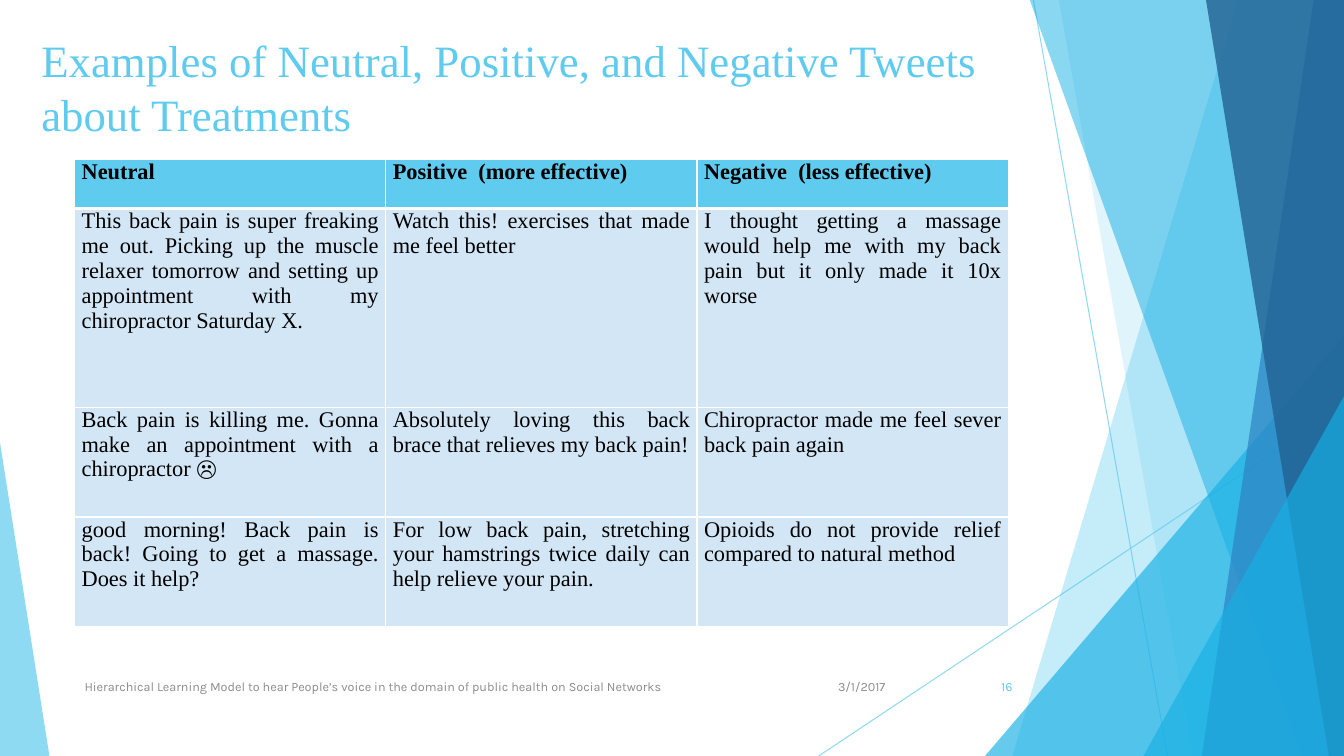
from lxml import etree
from pptx import Presentation
from pptx import util as u
from pptx.dml.color import RGBColor
from pptx.enum import shapes as sh, text as tx
from pptx.oxml.ns import qn

PX = 9144
WIDE, HIGH = 1333, 750
SKY, DEEP, BLUE, NAVY = "5FCBEF", "17B0E4", "2E83C3", "226292"
GREY, PALE, WHITE, BLACK = "8C8C8C", "D3E6F5", "FFFFFF", "000000"
SERIF, SANS = "Times New Roman", "Karla"

RAYS = [((1025, 0), (1158, HIGH)), ((WIDE, 403), (812, HIGH))]
BANDS = [
    (1228, 1004, SKY, 36),
    (1050, 1183, SKY, 20),
    ((977, 333, 356, 417), 1, DEEP, 66),
    (1021, 1291, DEEP, 50),
    (1303, 1192, BLUE, 70),
    (1196, 1318, NAVY, 80),
    ((1134, 393, 199, 357), 1, DEEP, 66),
    ((0, 439, 49, 311), 0, SKY, 70),
]
TWEETS = [
    ["Neutral ", "Positive  (more effective)", "Negative  (less effective)"],
    ["This back pain is super freaking me out. Picking up the muscle relaxer "
     "tomorrow and setting up appointment with my chiropractor Saturday X.",
     "Watch this! exercises that made me feel better ",
     "I thought getting a massage would help me with my back pain but it only "
     "made it 10x worse"],
    ["Back pain is killing me. Gonna make an appointment with a chiropractor ☹",
     "Absolutely loving this back brace that relieves my back pain!",
     "Chiropractor made me feel sever back pain again"],
    ["good morning! Back pain is back! Going to get a massage. Does it help?",
     "For low back pain, stretching your hamstrings twice daily can help "
     "relieve your pain.",
     "Opioids do not provide relief compared to natural method"],
]
ROWS = [49, 197, 109, 109]


def emu(*nums):
    return [u.Emu(n * PX) for n in nums]


def paint(fill, tone, alpha=100):
    fill.solid()
    fill.fore_color.rgb = RGBColor.from_string(tone)
    if alpha < 100:
        node = fill._xPr.find(qn("a:solidFill"))[0]
        etree.SubElement(node, qn("a:alpha"), val=str(alpha * 1000))


def style(frame, size, font, tone, align, bold=False):
    for para in frame.paragraphs:
        para.alignment = align
        for run in para.runs:
            run.font.size = u.Pt(size)
            run.font.name = font
            run.font.bold = bold
            run.font.color.rgb = RGBColor.from_string(tone)


def add_ray(slide, start, end):
    ray = slide.shapes.add_connector(
        sh.MSO_CONNECTOR.STRAIGHT, *emu(*start, *end))
    ray.line.width = u.Pt(0.75)
    paint(ray.line.fill, SKY, 70)
    etree.SubElement(ray._element.spPr, qn("a:effectLst"))


def add_wedge(slide, box, apex):
    wedge = slide.shapes.add_shape(
        sh.MSO_SHAPE.ISOSCELES_TRIANGLE, *emu(*box))
    wedge.adjustments[0] = apex
    return wedge


def add_band(slide, top, foot):
    pen = slide.shapes.build_freeform(top, -1, scale=PX)
    pen.add_line_segments([(WIDE, -1), (WIDE, HIGH), (foot, HIGH)])
    return pen.convert_to_shape()


def add_decor(slide):
    for start, end in RAYS:
        add_ray(slide, start, end)
    for top, foot, tone, alpha in BANDS:
        draw = add_wedge if isinstance(top, tuple) else add_band
        part = draw(slide, top, foot)
        part.shadow.inherit = False
        part.line.fill.background()
        paint(part.fill, tone, alpha)


def add_title(slide, box, words):
    title = slide.shapes.title
    title.left, title.top, title.width, title.height = emu(*box)
    frame = title.text_frame
    frame.text = words
    frame.word_wrap = True
    frame.auto_size = tx.MSO_AUTO_SIZE.NONE
    frame.vertical_anchor = tx.MSO_ANCHOR.MIDDLE
    style(frame, 32, SERIF, SKY, tx.PP_ALIGN.LEFT)


def edge(cell, side, width):
    line = etree.SubElement(
        cell._tc.get_or_add_tcPr(), qn("a:ln" + side), w=str(u.Pt(width)))
    fill = etree.SubElement(line, qn("a:solidFill"))
    etree.SubElement(fill, qn("a:srgbClr"), val=WHITE)


def add_cell(cell, words, head, below):
    cell.margin_left = cell.margin_right = u.Emu(7 * PX)
    cell.margin_top = cell.margin_bottom = 0
    for side in "LRTB":
        thick = side == "B" and head or side == "T" and below
        edge(cell, side, 3 if thick else 1)
    paint(cell.fill, SKY if head else PALE)
    cell.text_frame.text = words
    style(cell.text_frame, 16, SERIF, BLACK, tx.PP_ALIGN.JUSTIFY, head)


def add_grid(slide, box):
    cols = len(TWEETS[0])
    grid = slide.shapes.add_table(len(TWEETS), cols, *emu(*box)).table
    for col in grid.columns:
        col.width = u.Emu(box[2] * PX // cols)
    for r, (tall, line) in enumerate(zip(ROWS, TWEETS)):
        grid.rows[r].height = u.Emu(tall * PX)
        for c, words in enumerate(line):
            add_cell(grid.cell(r, c), words, r == 0, r == 1)


def add_note(slide, box, words, tone, align):
    frame = slide.shapes.add_textbox(*emu(*box)).text_frame
    frame.word_wrap = True
    frame.vertical_anchor = tx.MSO_ANCHOR.MIDDLE
    frame.text = words
    style(frame, 9, SANS, tone, align)


def add_foot(slide, box):
    left, top, width, tall = box
    right = left + width
    add_note(slide, (right - 226, top, 100, tall), "3/1/2017", GREY,
             tx.PP_ALIGN.RIGHT)
    add_note(slide, (left, top, 689, tall),
             "Hierarchical Learning Model to hear People’s voice in the domain "
             "of public health on Social Networks", GREY, tx.PP_ALIGN.LEFT)
    add_note(slide, (right - 75, top, 75, tall), "16", SKY, tx.PP_ALIGN.RIGHT)


def main():
    deck = Presentation()
    deck.slide_width, deck.slide_height = u.Inches(13.33), u.Inches(7.5)
    slide = deck.slides.add_slide(deck.slide_layouts[5])
    add_decor(slide)
    add_title(slide, (31, 22, 983, 127),
              "Examples of Neutral, Positive, and Negative Tweets about "
              "Treatments")
    add_grid(slide, (74, 158, 926, sum(ROWS)))
    add_foot(slide, (74, 661, 940, 40))
    deck.save("out.pptx")


if __name__ == "__main__":
    main()
